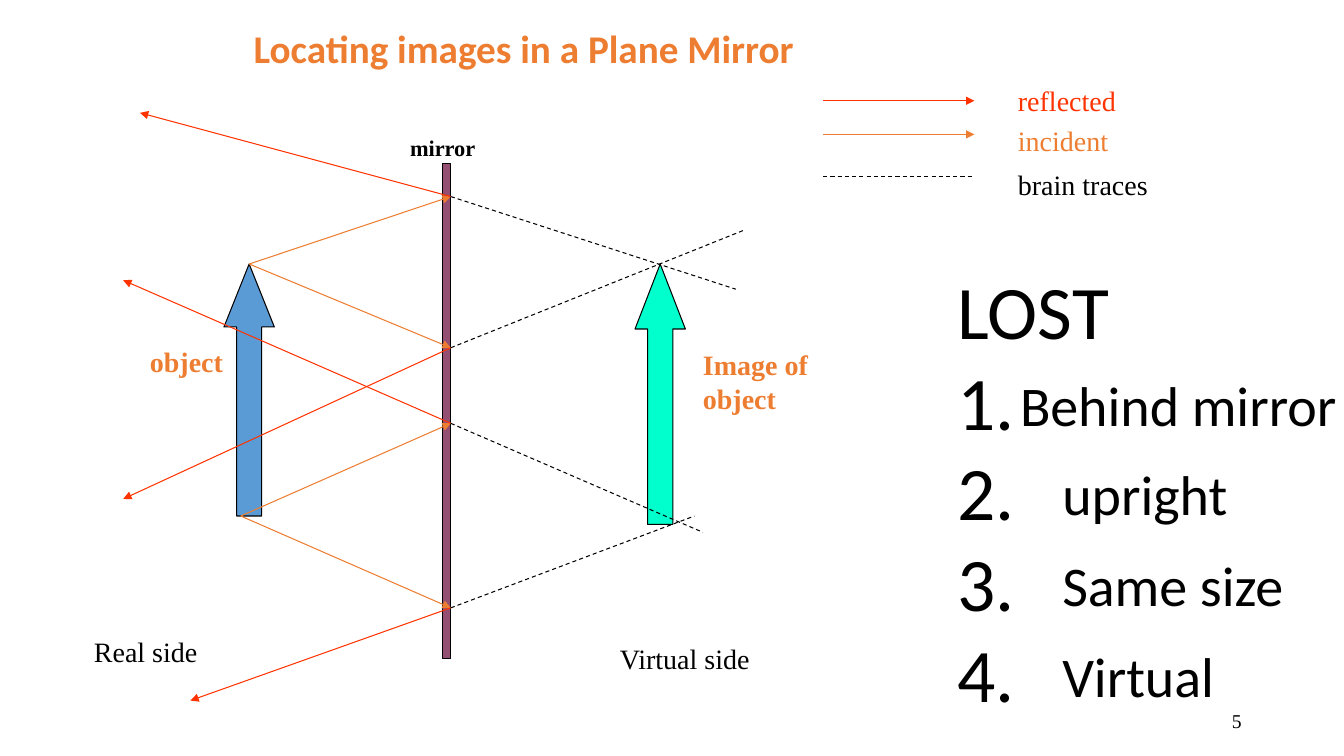
import pptx
import pptx.dml.color
import pptx.enum.dml
import pptx.enum.shapes
import pptx.enum.text
import pptx.oxml
import pptx.oxml.ns
import pptx.util

Pt = pptx.util.Pt
RGB = pptx.dml.color.RGBColor
SHAPE = pptx.enum.shapes.MSO_SHAPE
ALIGN = pptx.enum.text.PP_ALIGN
ANCHOR = pptx.enum.text.MSO_ANCHOR

BLACK = RGB(0x00, 0x00, 0x00)
ORANGE = RGB(0xED, 0x7D, 0x31)
RED = RGB(0xFF, 0x33, 0x00)
BLUE = RGB(0x5B, 0x9B, 0xD5)
AQUA = RGB(0x00, 0xFF, 0xCC)
PLUM = RGB(0x95, 0x4F, 0x72)

SERIF = "Times New Roman"
SANS = "Calibri"

MIRROR_X = 322
OBJECT_TIP = (178, 188.6)
OBJECT_FOOT = (172, 368.6)

# Source point, height of the hit on the mirror, reflected end, trace end
RAYS = [
    (OBJECT_TIP, 140.4, (100, 80.6), (525.6, 206.6)),
    (OBJECT_TIP, 248.4, (88, 356.4), (532, 164.2)),
    (OBJECT_FOOT, 434.2, (136, 500.4), (496, 368.6)),
    (OBJECT_FOOT, 302.4, (88, 200.2), (502, 380.2)),
]

# Label, colour, line height, label top, arrow
LEGEND = [
    ("reflected", RED, 72, 56.2, True),
    ("incident", ORANGE, 96, 84.4, True),
    ("brain traces", BLACK, 126, 116, False),
]


def add_text(slide, text, left, top, width, height, size, color=BLACK, font=SERIF,
             bold=False, anchor=ANCHOR.MIDDLE, align=ALIGN.LEFT):
    box = slide.shapes.add_textbox(Pt(left), Pt(top), Pt(width), Pt(height))
    frame = box.text_frame
    frame.text = text
    frame.word_wrap = True
    frame.vertical_anchor = anchor
    for para in frame.paragraphs:
        para.alignment = align
        for span in para.runs:
            span.font.size = Pt(size)
            span.font.name = font
            span.font.bold = bold
            span.font.color.rgb = color


def add_line(slide, start, end, color, arrow=True):
    """Draw a solid arrow, or a dashed plain line."""
    line = slide.shapes.add_connector(
        pptx.enum.shapes.MSO_CONNECTOR.STRAIGHT,
        Pt(start[0]), Pt(start[1]), Pt(end[0]), Pt(end[1]))
    line.line.color.rgb = color
    line.line.width = Pt(0.75)
    if arrow:
        outline = line.line._get_or_add_ln()
        head = pptx.oxml.parse_xml(
            '<a:tailEnd %s type="triangle"/>' % pptx.oxml.ns.nsdecls("a"))
        outline.append(head)
    else:
        line.line.dash_style = pptx.enum.dml.MSO_LINE.DASH
    effects = pptx.oxml.parse_xml("<a:effectLst %s/>" % pptx.oxml.ns.nsdecls("a"))
    line._element.spPr.append(effects)


def add_solid(slide, kind, left, top, width, height, fill, adjustments=()):
    shape = slide.shapes.add_shape(kind, Pt(left), Pt(top), Pt(width), Pt(height))
    for index, value in enumerate(adjustments):
        shape.adjustments[index] = value
    shape.fill.solid()
    shape.fill.fore_color.rgb = fill
    shape.line.color.rgb = BLACK
    shape.line.width = Pt(0.75)
    shape.shadow.inherit = False


def add_legend(slide):
    for label, color, line_y, label_top, arrow in LEGEND:
        add_line(slide, (588, line_y), (696, line_y), color, arrow)
        add_text(slide, label, 720, label_top, 130, 31, 20, color)


def add_diagram(slide):
    # Object, mirror and image
    add_solid(slide, SHAPE.UP_ARROW, 160, 188.6, 36, 180, BLUE, (0.5, 1.25))
    add_solid(slide, SHAPE.RECTANGLE, 316, 116.6, 6, 354, PLUM)
    add_solid(slide, SHAPE.UP_ARROW, 453.6, 188.6, 36, 186, AQUA, (0.5, 1.29))

    # Incident rays, reflected rays and their traces behind the mirror
    for source, hit_y, reflected_end, trace_end in RAYS:
        hit = (MIRROR_X, hit_y)
        add_line(slide, source, hit, ORANGE)
        add_line(slide, hit, reflected_end, RED)
        add_line(slide, hit, trace_end, BLACK, arrow=False)

    # Labels
    add_text(slide, "object", 100, 242.6, 72, 31, 20, ORANGE, bold=True)
    add_text(slide, "mirror", 285.8, 92.2, 90, 26.6, 16, bold=True)
    add_text(slide, "Image of object", 495, 245, 100, 55, 20, ORANGE, bold=True)
    add_text(slide, "Virtual side", 435.6, 454.5, 120, 31.5, 20)
    add_text(slide, "Real side", 60, 449.5, 100, 31.5, 20)


def add_lost_list(slide):
    add_text(slide, "LOST\n1.\n2.\n3.\n4.", 677, 185, 229, 334, 54,
             font=SANS, anchor=ANCHOR.TOP)
    answers = [("Behind mirror", 721.5, 261.4), ("upright", 751.7, 324.7),
               ("Same size", 751.7, 389.5), ("Virtual", 751.7, 455)]
    for answer, left, top in answers:
        add_text(slide, answer, left, top, 256, 55.4, 40, font=SANS, anchor=ANCHOR.TOP)


def main():
    deck = pptx.Presentation()
    deck.slide_width = Pt(960)
    deck.slide_height = Pt(540)
    page = deck.slides.add_slide(deck.slide_layouts[6])

    # Title
    add_text(page, "Locating images in a Plane Mirror", 174.2, 10.2, 612, 48, 28,
             ORANGE, SANS, bold=True)
    add_legend(page)
    add_diagram(page)
    add_lost_list(page)
    # Page number
    add_text(page, "5", 678, 500.4, 216, 28.8, 14, align=ALIGN.RIGHT)

    deck.save("out.pptx")


if __name__ == "__main__":
    main()
